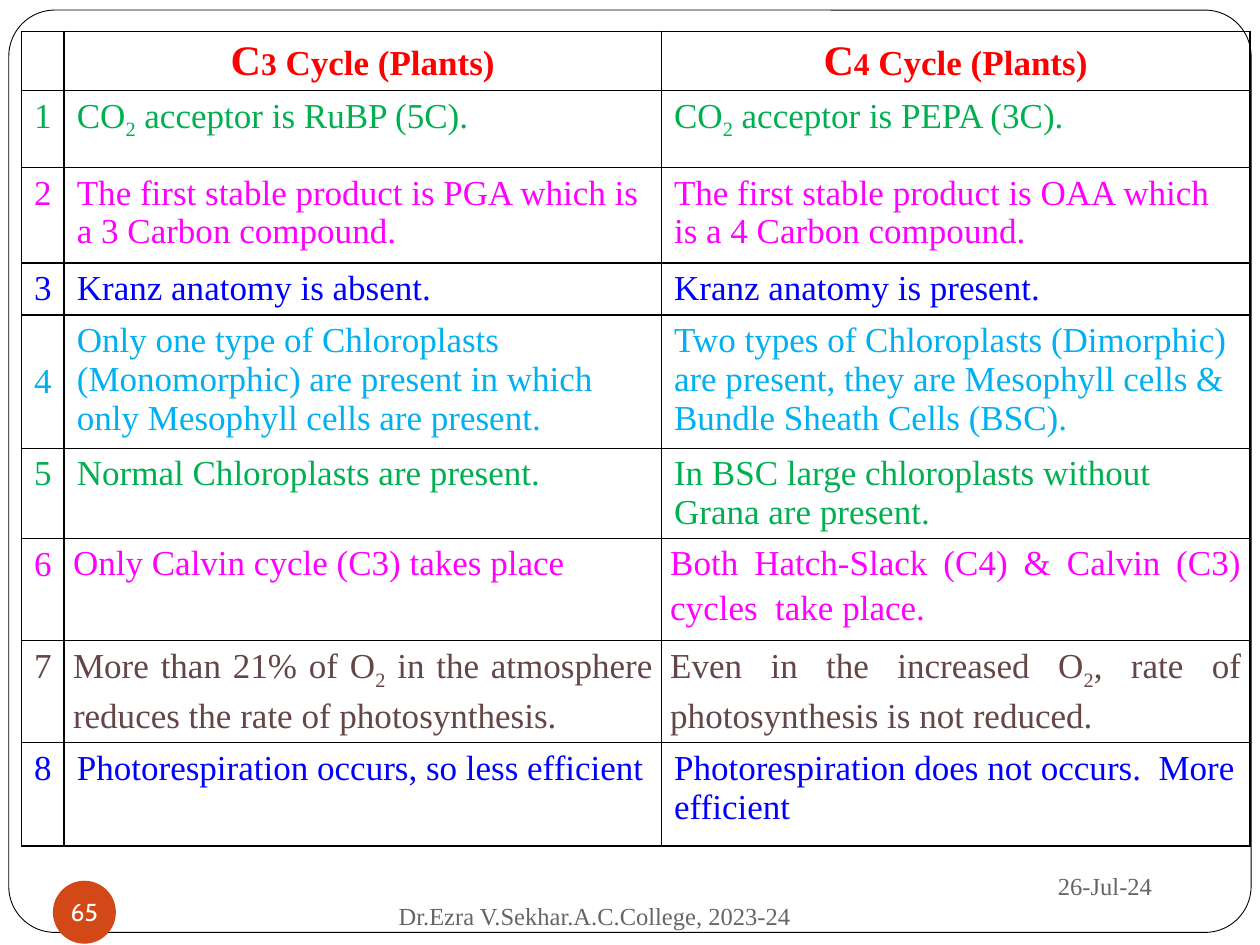
"""Build a slide comparing the C3 and C4 cycles of plants."""
from lxml import etree
from pptx import Presentation
from pptx.dml.color import RGBColor
from pptx.enum import shapes, text
from pptx.oxml import ns
from pptx.util import Inches, Pt

BLACK = RGBColor(0x00, 0x00, 0x00)
WHITE = RGBColor(0xFF, 0xFF, 0xFF)
RED = RGBColor(0xFF, 0x00, 0x00)
GREEN = RGBColor(0x00, 0xB0, 0x50)
MAGENTA = RGBColor(0xFF, 0x00, 0xFF)
BLUE = RGBColor(0x00, 0x00, 0xFF)
SKY = RGBColor(0x00, 0xB0, 0xF0)
BROWN = RGBColor(0x64, 0x46, 0x46)
GREY = RGBColor(0x69, 0x64, 0x64)
ORANGE = RGBColor(0xD3, 0x48, 0x17)
SERIF = "Times New Roman"

HEADINGS = [("C", "3", " Cycle (Plants)"), ("C", "4", " Cycle (Plants)")]
HEADING_SIZES = (24, 18, 20)
SUBSCRIPT_MARK = "_"
DIFFERENCES = [
    (GREEN, 0.61, "CO_2_ acceptor is RuBP (5C).", "CO_2_ acceptor is PEPA (3C)."),
    (MAGENTA, 0.76, "The first stable product is PGA which is a 3 Carbon compound.",
     "The first stable product is OAA which is a 4 Carbon compound."),
    (BLUE, 0.41, "Kranz anatomy is absent.", "Kranz anatomy is present."),
    (SKY, 1.06, "Only one type of Chloroplasts (Monomorphic) are present in which "
     "only Mesophyll cells are present.",
     "Two types of Chloroplasts (Dimorphic) are present, they are Mesophyll cells & "
     "Bundle Sheath Cells (BSC)."),
    (GREEN, 0.71, "Normal Chloroplasts are present.",
     "In BSC large chloroplasts without  Grana are present."),
    (MAGENTA, 0.81, "Only Calvin cycle (C3) takes place",
     "Both Hatch-Slack (C4) & Calvin (C3) cycles  take place."),
    (BROWN, 0.81, "More than 21% of O_2_ in the atmosphere reduces the rate of photosynthesis.",
     "Even in the increased O_2_, rate of photosynthesis is not reduced."),
    (BLUE, 0.82, "Photorespiration occurs, so less efficient",
     "Photorespiration does not occurs.  More efficient"),
]
JUSTIFIED = (6, 7)
MIDDLE_NUMBER = 4
COLUMN_WIDTHS = (0.34, 4.74, 4.67)
HEADING_HEIGHT = 0.46
FOOTERS = [
    ("26-Jul-24", (8.08, 6.77, 1.38, 0.52)),
    ("Dr.Ezra V.Sekhar.A.C.College, 2023-24", (2.87, 7.02, 3.7, 0.5)),
]


def add_run(paragraph, words, size, color, font=SERIF, bold=False):
    run = paragraph.add_run()
    run.text = words
    run.font.size = Pt(size)
    run.font.name = font
    run.font.bold = bold
    run.font.color.rgb = color
    return run


def add_formula(paragraph, words, color):
    for position, piece in enumerate(words.split(SUBSCRIPT_MARK)):
        run = add_run(paragraph, piece, 20, color)
        if position % 2:
            run._r.get_or_add_rPr().set("baseline", "-25000")


def style_cell(cell):
    properties = cell._tc.get_or_add_tcPr()
    for side in ("a:lnL", "a:lnR", "a:lnT", "a:lnB"):
        border = etree.SubElement(properties, ns.qn(side), w=str(Pt(1)))
        fill = etree.SubElement(border, ns.qn("a:solidFill"))
        etree.SubElement(fill, ns.qn("a:srgbClr"), val=str(BLACK))
    cell.fill.background()


def justify(cell):
    cell.margin_left = cell.margin_right = Inches(0.07)
    cell.margin_top = cell.margin_bottom = 0
    paragraph = cell.text_frame.paragraphs[0]
    paragraph.alignment = text.PP_ALIGN.JUSTIFY
    paragraph.line_spacing = 1.15


def add_panel(slide, kind, box, fill):
    panel = slide.shapes.add_shape(kind, *map(Inches, box))
    panel.shadow.inherit = False
    panel.fill.solid()
    panel.fill.fore_color.rgb = fill
    return panel


def add_centred(frame, words, color, font):
    frame.vertical_anchor = text.MSO_ANCHOR.MIDDLE
    paragraph = frame.paragraphs[0]
    paragraph.alignment = text.PP_ALIGN.CENTER
    add_run(paragraph, words, 14, color, font)


def add_comparison(slide):
    heights = [HEADING_HEIGHT] + [height for _, height, *_ in DIFFERENCES]
    box = (0.17, 0.25, sum(COLUMN_WIDTHS), sum(heights))
    table = slide.shapes.add_table(len(heights), len(COLUMN_WIDTHS), *map(Inches, box)).table
    table.first_row = table.horz_banding = False
    for column, width in zip(table.columns, COLUMN_WIDTHS):
        column.width = Inches(width)
    for row, height in zip(table.rows, heights):
        row.height = Inches(height)
    for cell in table.iter_cells():
        style_cell(cell)

    for column, heading in enumerate(HEADINGS, 1):
        paragraph = table.cell(0, column).text_frame.paragraphs[0]
        paragraph.alignment = text.PP_ALIGN.CENTER
        for words, size in zip(heading, HEADING_SIZES):
            add_run(paragraph, words, size, RED, bold=True)

    for number, (color, _, *statements) in enumerate(DIFFERENCES, 1):
        for column, words in enumerate([str(number), *statements]):
            cell = table.cell(number, column)
            add_formula(cell.text_frame.paragraphs[0], words, color)
            if column and number in JUSTIFIED:
                justify(cell)
    table.cell(MIDDLE_NUMBER, 0).vertical_anchor = text.MSO_ANCHOR.MIDDLE


def main():
    deck = Presentation()
    deck.slide_width, deck.slide_height = Inches(10), Inches(7.5)
    slide = deck.slides.add_slide(deck.slide_layouts[6])

    frame = add_panel(slide, shapes.MSO_SHAPE.ROUNDED_RECTANGLE, (0.07, 0.08, 9.86, 7.32), WHITE)
    frame.adjustments[0] = 0.05
    frame.line.color.rgb = BLACK
    frame.line.width = Pt(0.5)

    badge = add_panel(slide, shapes.MSO_SHAPE.OVAL, (0.42, 6.99, 0.5, 0.5), ORANGE)
    badge.line.fill.background()
    label = badge.text_frame
    label.margin_left = label.margin_right = label.margin_top = label.margin_bottom = 0
    label.word_wrap = False
    add_centred(label, "65", WHITE, "Cabin")

    add_comparison(slide)
    for words, box in FOOTERS:
        footer = slide.shapes.add_textbox(*map(Inches, box)).text_frame
        footer.word_wrap = True
        add_centred(footer, words, GREY, SERIF)
    deck.save("out.pptx")


if __name__ == "__main__":
    main()
